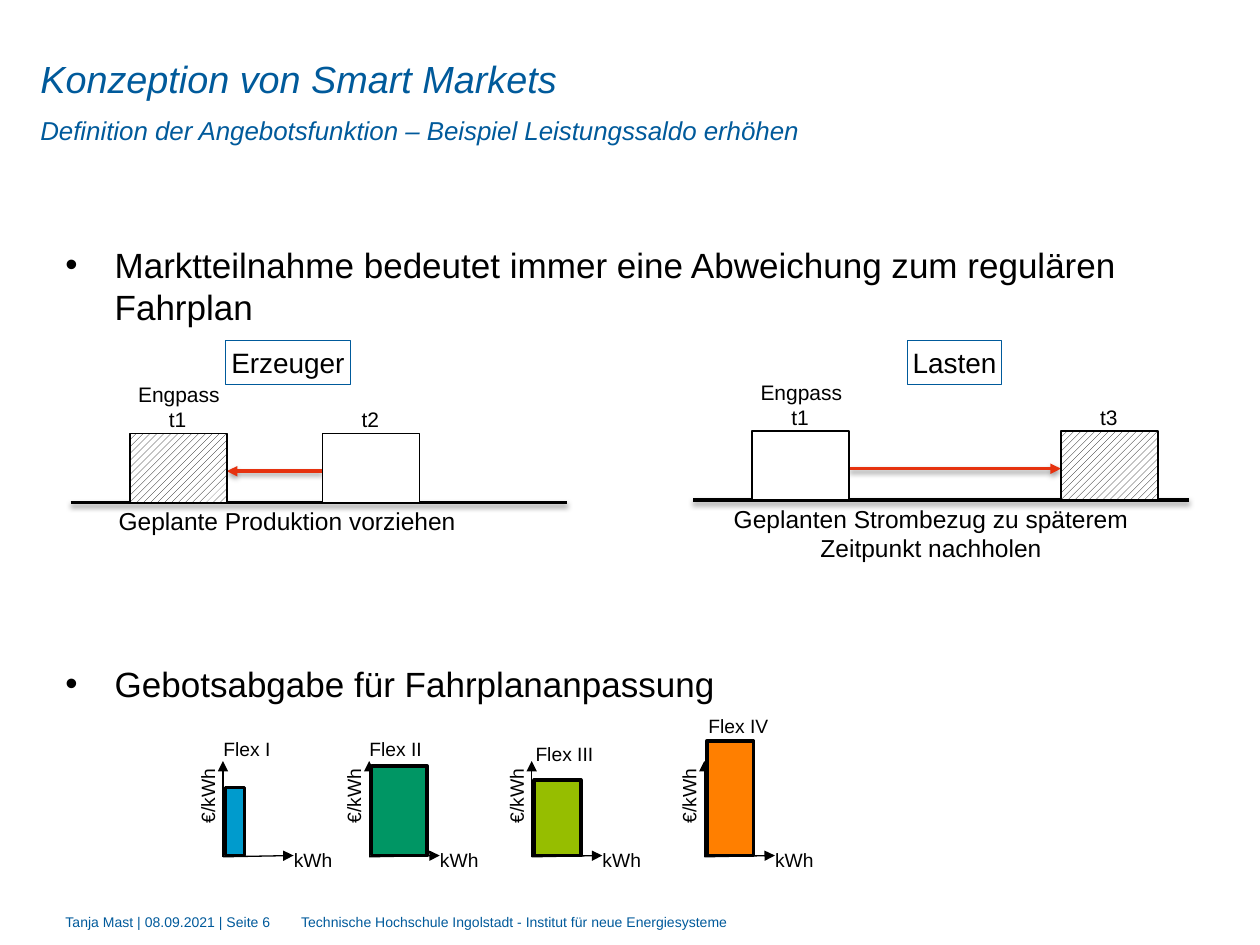
from lxml import etree
from pptx import Presentation, util as u
from pptx.dml.color import RGBColor
from pptx.enum import dml, shapes, text
from pptx.oxml.ns import qn

BLUE, BLACK, WHITE, RED = "005A9B", "000000", "FFFFFF", "E6320F"
LEFT, CENTER = text.PP_ALIGN.LEFT, text.PP_ALIGN.CENTER
TOP, MIDDLE = text.MSO_ANCHOR.TOP, text.MSO_ANCHOR.MIDDLE


def paint(color, value):
    color.rgb = RGBColor.from_string(value)


def child(parent, tag, **attributes):
    return etree.SubElement(parent, qn(tag), {k: str(v) for k, v in attributes.items()})


class Sketch:
    font = "Arial"

    def __init__(self, slide):
        self.slide = slide

    def add_words(self, frame, words, size, color=BLACK, align=CENTER, italic=False):
        para = frame.paragraphs[0]
        para.alignment = align
        span = para.add_run()
        span.text = words
        span.font.name = self.font
        span.font.size = u.Pt(size)
        span.font.italic = italic
        paint(span.font.color, color)
        return para

    def label(self, words, x, y, w, h, size, color=BLACK, align=CENTER,
              italic=False, inset=True, wrap=True, anchor=TOP, turn=0):
        box = self.slide.shapes.add_textbox(u.Inches(x), u.Inches(y), u.Inches(w), u.Inches(h))
        box.rotation = turn
        frame = box.text_frame
        frame.word_wrap = wrap
        frame.vertical_anchor = anchor
        if not inset:
            frame.margin_left = frame.margin_right = frame.margin_top = frame.margin_bottom = 0
        return self.add_words(frame, words, size, color, align, italic)

    def bullet(self, words, y, h):
        para = self.label(words, 0.52, y, 9.07, h, 20, align=LEFT, inset=False)
        para.line_spacing = u.Pt(24)
        properties = para._p.get_or_add_pPr()
        properties.set("marL", str(u.Inches(0.39)))
        properties.set("indent", str(-u.Inches(0.39)))
        child(properties, "a:buFont", typeface=self.font)
        child(properties, "a:buChar", char="•")

    def box(self, x, y, w, h, fill=None, line=BLACK, width=1, hatched=False):
        shape = self.slide.shapes.add_shape(
            shapes.MSO_SHAPE.RECTANGLE, u.Inches(x), u.Inches(y), u.Inches(w), u.Inches(h))
        shape.shadow.inherit = False
        if hatched:
            shape.fill.patterned()
            shape.fill.pattern = dml.MSO_PATTERN.WIDE_UPWARD_DIAGONAL
            paint(shape.fill.fore_color, BLACK)
            paint(shape.fill.back_color, WHITE)
        elif fill:
            shape.fill.solid()
            paint(shape.fill.fore_color, fill)
        else:
            shape.fill.background()
        paint(shape.line.color, line)
        shape.line.width = u.Pt(width)
        return shape

    def heading(self, words, x, w):
        frame = self.box(x, 2.7, w, 0.35, line=BLUE, width=0.75).text_frame
        frame.word_wrap = False
        frame.margin_left = frame.margin_right = u.Inches(0.04)
        frame.margin_top = frame.margin_bottom = u.Inches(0.04)
        self.add_words(frame, words, 16)

    def line(self, x1, y1, x2, y2, color=BLACK, width=2, arrow=False, shadow=False):
        line = self.slide.shapes.add_connector(
            shapes.MSO_CONNECTOR.STRAIGHT, u.Inches(x1), u.Inches(y1), u.Inches(x2), u.Inches(y2))
        paint(line.line.color, color)
        line.line.width = u.Pt(width)
        properties = line._element.spPr
        if arrow:
            child(properties.find(qn("a:ln")), "a:tailEnd", type="triangle")
        effects = child(properties, "a:effectLst")
        if shadow:
            cast = child(effects, "a:outerShdw", blurRad=u.Pt(3.1), dist=u.Pt(1.6),
                         dir=5400000, rotWithShape=0)
            child(child(cast, "a:srgbClr", val=BLACK), "a:alpha", val=38000)

    def schedule(self, x, y, other, shift, planned_first, caption, caption_x, caption_h):
        first, second = x + 0.47, x + shift
        self.line(x, y, x + 3.94, y, shadow=True)
        ends = (second, first + 0.77) if planned_first else (first + 0.77, second)
        self.line(ends[0], y - 0.25, ends[1], y - 0.25, RED, arrow=True, shadow=True)
        for name, left, hatched in (("t1", first, planned_first),
                                    (other, second, not planned_first)):
            self.box(left, y - 0.55, 0.77, 0.55, WHITE, hatched=hatched)
            self.label(name, left - 0.03, y - 0.81, 0.82, 0.3, 12)
        self.label("Engpass", x + 0.3, y - 1.01, 1.12, 0.3, 12)
        self.label(caption, caption_x, y - 0.02, 3.66, caption_h, 14)

    def offer(self, name, x, name_x, name_y, w, h, color):
        self.line(x, 6.8, x, 6.04, width=0.75, arrow=True)
        self.line(x, 6.8, x + 0.56, 6.79, width=0.75, arrow=True)
        self.label("€/kWh", x - 0.44, 6.17, 0.64, 0.29, 11, wrap=False, turn=270)
        self.label(name, name_x, name_y, 0.68, 0.29, 11, wrap=False)
        self.label("kWh", x + 0.46, 6.68, 0.51, 0.29, 11, wrap=False)
        self.box(x + 0.02, 6.79 - h, w, h, color, width=2)


def main():
    deck = Presentation()
    deck.slide_width, deck.slide_height = u.Inches(10), u.Inches(7.5)
    page = Sketch(deck.slides.add_slide(deck.slide_layouts[6]))

    footer = page.label(
        "Tanja Mast | 08.09.2021 | Seite 6\tTechnische Hochschule Ingolstadt"
        " - Institut für neue Energiesysteme",
        0.52, 7.25, 6.5, 0.13, 8, BLUE, LEFT, inset=False)
    tabs = child(footer._p.get_or_add_pPr(), "a:tabLst")
    child(tabs, "a:tab", pos=u.Inches(1.87), algn="l")

    page.label("Konzeption von Smart Markets", 0.32, 0.44, 6.92, 0.36, 21.6,
               BLUE, LEFT, italic=True, inset=False, anchor=MIDDLE)
    subtitle = page.label("Definition der Angebotsfunktion – Beispiel Leistungssaldo erhöhen",
                          0.32, 0.81, 6.92, 0.37, 14.8, BLUE, LEFT, italic=True, inset=False)
    subtitle.line_spacing = 1.4

    page.bullet("Marktteilnahme bedeutet immer eine Abweichung zum regulären Fahrplan", 1.93, 0.67)
    page.bullet("Gebotsabgabe für Fahrplananpassung", 5.26, 0.34)

    page.heading("Erzeuger", 1.79, 0.99)
    page.heading("Lasten", 7.2, 0.75)
    page.schedule(0.56, 3.99, "t2", 2.0, True, "Geplante Produktion vorziehen", 0.45, 0.34)
    page.schedule(5.5, 3.97, "t3", 2.92, False,
                  "Geplanten Strombezug zu späterem Zeitpunkt nachholen", 5.56, 0.57)

    for offer in (
        ("Flex I", 1.77, 1.62, 5.8, 0.15, 0.54, "009BCD"),
        ("Flex II", 2.93, 2.8, 5.8, 0.44, 0.71, "009664"),
        ("Flex III", 4.22, 4.14, 5.84, 0.37, 0.6, "96BE00"),
        ("Flex IV", 5.59, 5.52, 5.62, 0.37, 0.91, "FF7F00"),
    ):
        page.offer(*offer)

    deck.save("out.pptx")


if __name__ == "__main__":
    main()
